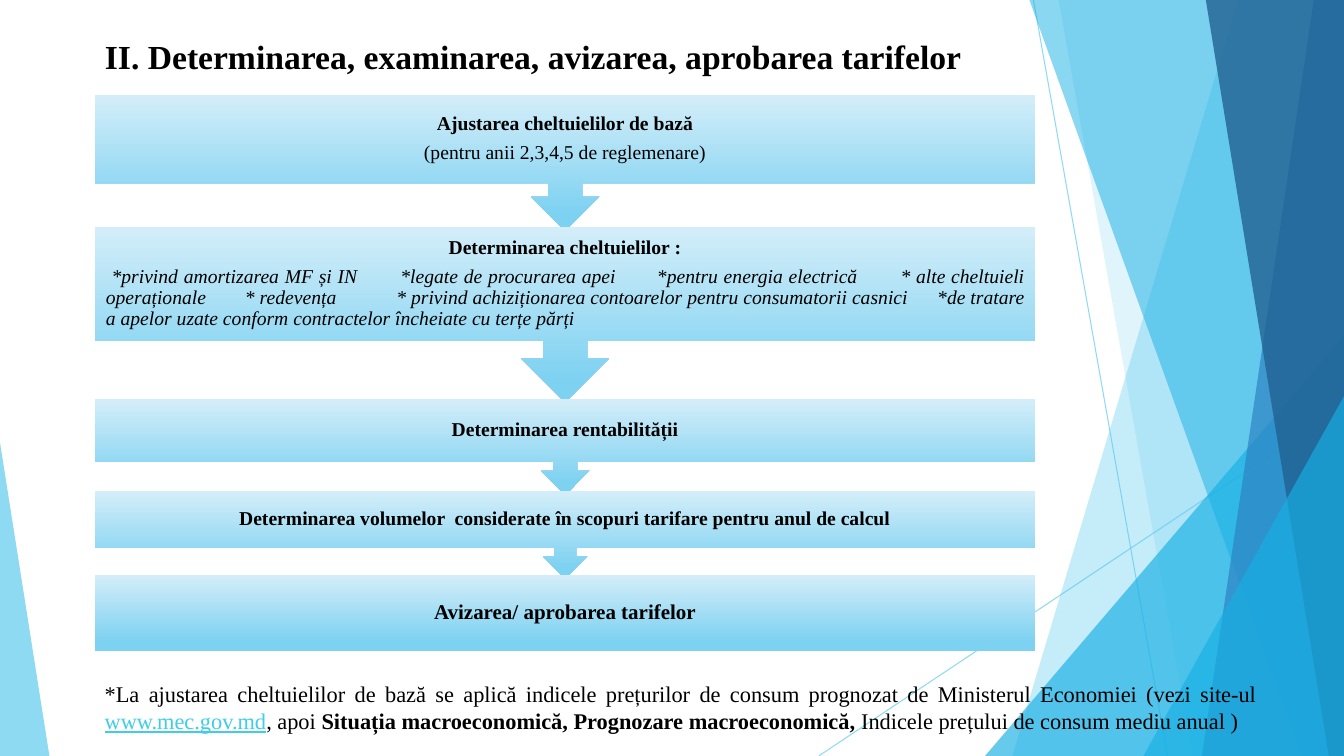
from collections import namedtuple

from lxml.etree import SubElement
from pptx import Presentation
from pptx.dml.color import RGBColor
from pptx.enum.shapes import MSO_CONNECTOR, MSO_SHAPE
from pptx.enum.text import MSO_ANCHOR, PP_ALIGN
from pptx.oxml.ns import qn
from pptx.util import Inches, Pt

COLUMNS, ROWS = 13.33, 7.5
FONT = "Times New Roman"
COLORS = {
    "sky": "5FCBEF", "azure": "17B0E4", "blue": "2E83C3", "navy": "226292",
    "pale": "D4EEF9", "aqua": "7DD1F1", "text": "000000", "link": "3FCDE7",
}
Box = namedtuple("Box", "left top width height")


def grid(*cells):
    return [Inches(cell) for cell in cells]


def rgb(name):
    return RGBColor.from_string(COLORS[name])


def set_alpha(color_format, owner, percent):
    color = owner.find(".//" + qn("a:srgbClr"))
    SubElement(color, qn("a:alpha")).set("val", str(percent * 1000))


def paint(shape, color, opacity):
    shape.shadow.inherit = False
    shape.line.fill.background()
    shape.fill.solid()
    shape.fill.fore_color.rgb = rgb(color)
    set_alpha(shape.fill, shape.fill._xPr, opacity)


def style(para, size, bold=False, italic=False, align=PP_ALIGN.LEFT):
    para.alignment = align
    para.font.name = FONT
    para.font.size = Pt(size)
    para.font.bold = bold
    para.font.italic = italic
    para.font.color.rgb = rgb("text")


def add_ray(page, start, end):
    ray = page.shapes.add_connector(MSO_CONNECTOR.STRAIGHT, *grid(*start, *end))
    ray.line.color.rgb = rgb("sky")
    ray.line.width = Pt(0.75)
    properties = ray.line._ln.getparent()
    set_alpha(ray.line, properties, 70)
    SubElement(properties, qn("a:effectLst"))


def add_band(page, box, top_left, bottom_left, color, opacity):
    right, bottom = box.left + box.width, box.top + box.height
    builder = page.shapes.build_freeform(*grid(top_left, box.top), scale=1.0)
    corners = [(right, box.top), (right, bottom), (bottom_left, bottom)]
    builder.add_line_segments([grid(*corner) for corner in corners])
    paint(builder.convert_to_shape(), color, opacity)


def add_wedge(page, box, left, top, width, apex, color, opacity):
    height = box.top + box.height - top
    wedge = page.shapes.add_shape(
        MSO_SHAPE.ISOSCELES_TRIANGLE, *grid(left, top, width, height))
    wedge.adjustments[0] = apex
    paint(wedge, color, opacity)


def add_backdrop(page, box):
    bottom, right = box.top + box.height, box.left + box.width
    add_ray(page, (10.25, box.top), (11.58, bottom))
    add_ray(page, (right, 4.03), (8.12, bottom))
    add_band(page, box, 12.28, 10.04, "sky", 36)
    add_band(page, box, 10.5, 11.83, "sky", 20)
    add_wedge(page, box, 9.77, 3.33, 3.56, 1, "azure", 66)
    add_band(page, box, 10.21, 12.91, "azure", 50)
    add_band(page, box, 13.03, 11.92, "blue", 70)
    add_band(page, box, 11.96, 13.18, "navy", 80)
    add_wedge(page, box, 11.34, 3.93, 1.99, 1, "azure", 66)
    add_wedge(page, box, box.left, 4.39, 0.49, 0, "sky", 70)


def add_title(page, box):
    title = page.shapes.title
    title.left, title.top, title.width, title.height = grid(*box)
    title.text = "II. Determinarea, examinarea, avizarea, aprobarea tarifelor"
    title.text_frame.vertical_anchor = MSO_ANCHOR.TOP
    style(title.text_frame.paragraphs[0], 24, bold=True)


def add_step(page, box, kind, size, heading):
    step = page.shapes.add_shape(kind, *grid(*box))
    step.shadow.inherit = False
    step.line.fill.background()
    step.fill.gradient()
    step.fill.gradient_angle = 270
    for stop, (color, position) in zip(
            step.fill.gradient_stops, [("pale", 0), ("aqua", 0.88)]):
        stop.color.rgb = rgb(color)
        stop.position = position
    frame = step.text_frame
    frame.word_wrap = True
    frame.vertical_anchor = MSO_ANCHOR.MIDDLE
    frame.margin_left = frame.margin_right = Inches(0.11)
    frame.margin_top = frame.margin_bottom = Inches(0.11)
    para = frame.paragraphs[0]
    para.text = heading
    style(para, size, bold=True, align=PP_ALIGN.CENTER)
    para.line_spacing = 0.9
    para.space_after = Pt(5.5)
    return frame


def add_detail(frame, text, italic, align):
    para = frame.add_paragraph()
    para.text = text
    style(para, 14, italic=italic, align=align)
    para.line_spacing = 0.9
    return para


def add_tab_stops(para, stops):
    tabs = SubElement(para._p.get_or_add_pPr(), qn("a:tabLst"))
    for stop in stops:
        SubElement(tabs, qn("a:tab"), pos=str(Inches(stop)), algn="l")


def add_flow(page, box):
    steps = [
        (0, 1.35, "Ajustarea cheltuielilor de bază"),
        (1.31, 1.74, "Determinarea cheltuielilor :"),
        (3.02, 0.95, "Determinarea rentabilității"),
        (3.93, 0.87, "Determinarea volumelor  considerate în scopuri tarifare "
                     "pentru anul de calcul"),
        (4.76, 0.76, "Avizarea/ aprobarea tarifelor"),
    ]
    frames = []
    for offset, height, heading in steps:
        last = heading == steps[-1][2]
        kind = MSO_SHAPE.RECTANGLE if last else MSO_SHAPE.DOWN_ARROW_CALLOUT
        place = Box(box.left, box.top + offset, box.width, height)
        frames.append(add_step(page, place, kind, 15 if last else 14, heading))
    add_detail(frames[0], "(pentru anii 2,3,4,5 de reglemenare)",
               False, PP_ALIGN.CENTER)
    costs = add_detail(
        frames[1],
        " *privind amortizarea MF și IN\t*legate de procurarea apei"
        "\t*pentru energia electrică\t* alte cheltuieli operaționale"
        "\t* redevența\t* privind achiziționarea contoarelor pentru "
        "consumatorii casnici\t*de tratare a apelor uzate conform "
        "contractelor încheiate cu terțe părți",
        True, PP_ALIGN.JUSTIFY)
    add_tab_stops(costs, [1.38, 2.88, 5.4, 7.8, 8.24])


def add_note(page, box):
    frame = page.shapes.add_textbox(*grid(*box)).text_frame
    frame.word_wrap = True
    para = frame.paragraphs[0]
    style(para, 16, align=PP_ALIGN.JUSTIFY)
    texts = [
        "*La ajustarea cheltuielilor de bază se aplică indicele prețurilor de "
        "consum prognozat de Ministerul Economiei (vezi site-ul ",
        "www.mec.gov.md",
        ", apoi ",
        "Situația macroeconomică, Prognozare macroeconomică, ",
        "Indicele prețului de consum mediu anual )",
    ]
    spans = []
    for text in texts:
        span = para.add_run()
        span.text = text
        span.font.name = FONT
        span.font.size = Pt(16)
        span.font.color.rgb = rgb("text")
        spans.append(span)
    spans[1].font.color.rgb = rgb("link")
    spans[1].font.underline = True
    spans[3].font.bold = True


def main():
    deck = Presentation()
    deck.slide_width, deck.slide_height = grid(COLUMNS, ROWS)
    page = deck.slides.add_slide(deck.slide_layouts[5])
    add_backdrop(page, Box(0, 0, COLUMNS, ROWS))
    add_title(page, Box(0.94, 0.31, 12.39, 0.5))
    add_flow(page, Box(0.94, 0.94, 9.33, 5.52))
    add_note(page, Box(0.94, 6.7, 11.63, 0.64))
    deck.save("out.pptx")


if __name__ == "__main__":
    main()
